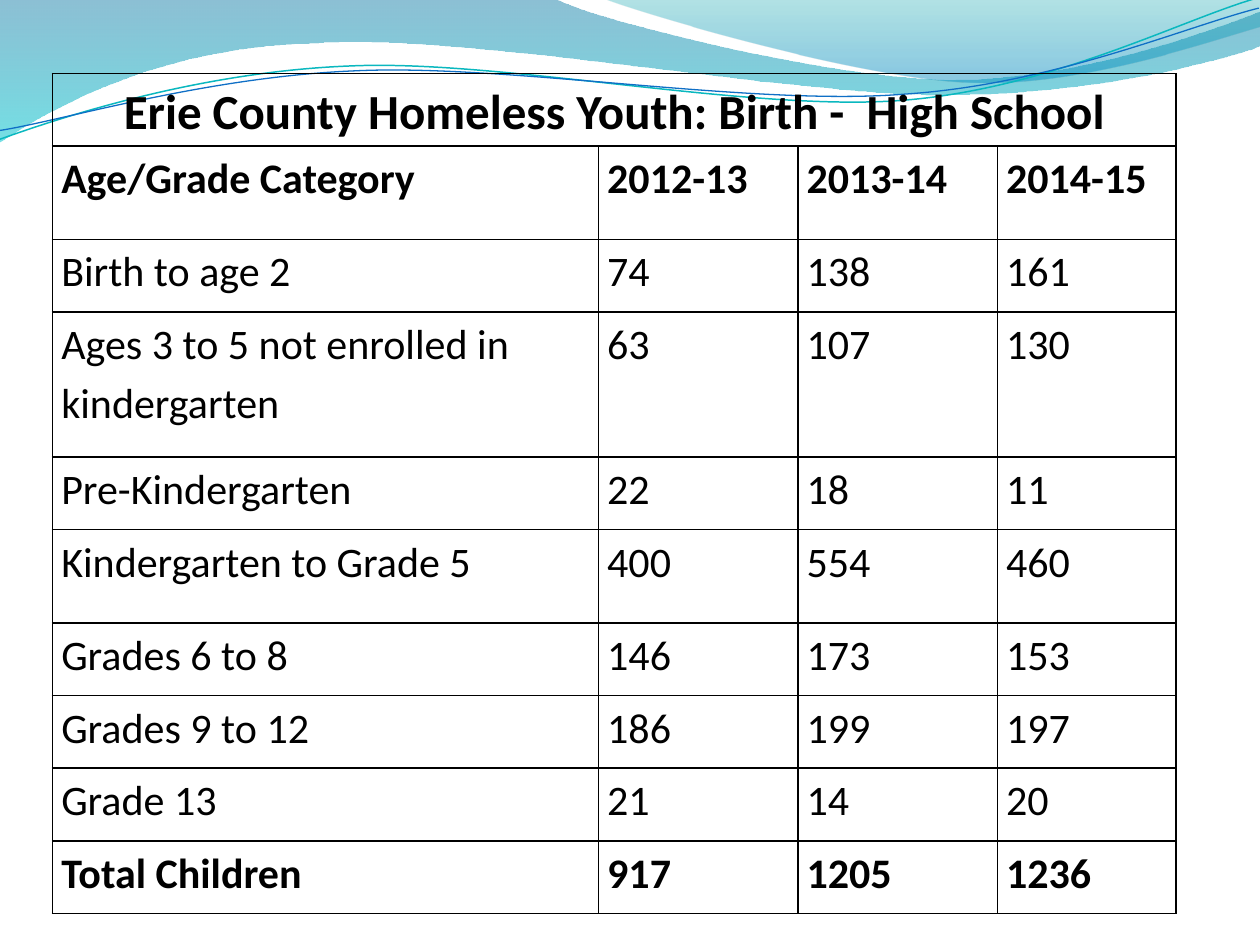
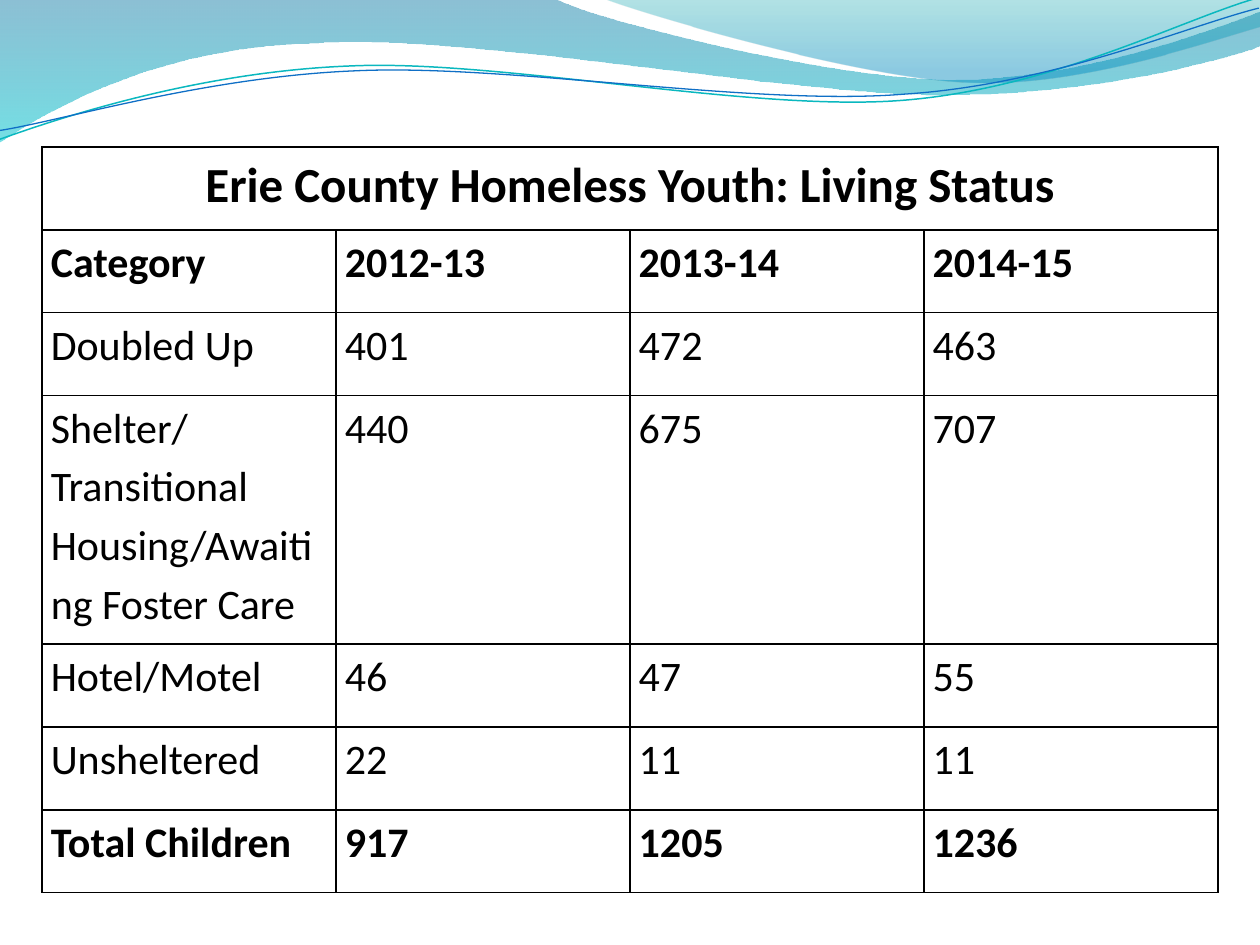
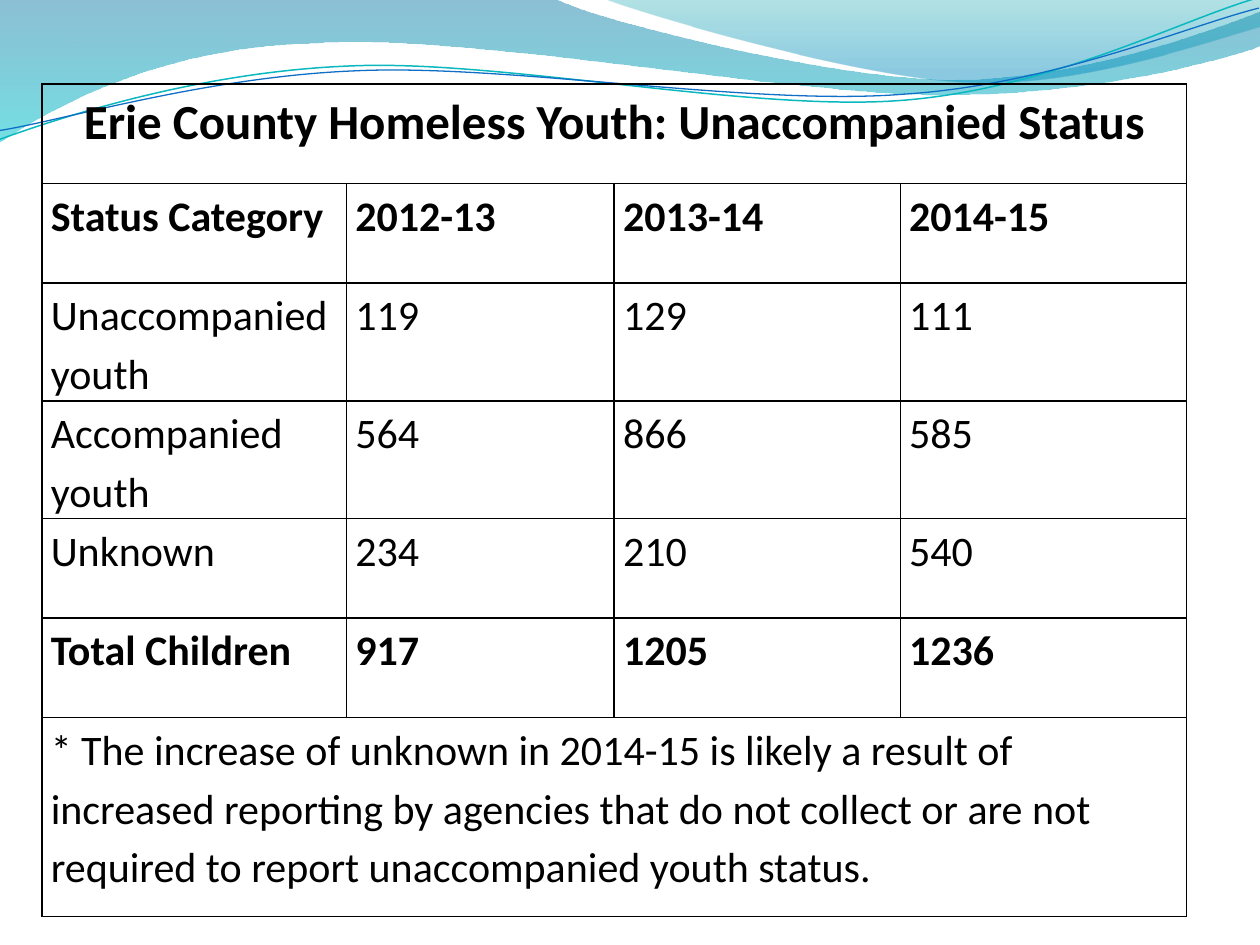
from lxml.etree import SubElement
from pptx import Presentation
from pptx.dml.color import RGBColor
from pptx.enum.text import PP_ALIGN as Align
from pptx.oxml import parse_xml
from pptx.oxml.ns import nsdecls, qn
from pptx.util import Inches, Pt

BLACK = "000000"
FONT = "Calibri"
STRAND_TILT = 357.3
YEARS = ["2012-13", "2013-14", "2014-15"]
TOTALS = ["Total Children", "917", "1205", "1236"]

# Each wave: start point, then (x, y) lines or (x1, y1, x2, y2, x, y) Bezier curves.
# Gradient stops are (position, colour, opacity in percent).
BANDS = [
    ([(0, 0), (4.4, -0.01), (4.76, 0.17, 6.64, 0.63, 7.58, 0.63),
      (8.53, 0.63, 9.58, 0.26, 10, 0.09), (10.01, 0.36),
      (9.83, 0.44, 8.7, 0.76, 7.46, 0.75), (6.22, 0.75, 3.82, 0.28, 2.57, 0.34),
      (1.29, 0.36, 0.46, 0.83, -0.01, 1.13), (0, 0)],
     [(0, "0074A1", 45), (1, "00C6CF", 55)]),
    ([(4.79, -0.01), (5.09, 0.11, 6.82, 0.62, 7.69, 0.65),
      (8.56, 0.69, 9.61, 0.32, 10, 0.21), (10, 0), (4.79, -0.01)],
     [(0, "00A1A9", 30), (0.8, "008BBF", 45)]),
]
# Strand points are given before the tilt.
STRANDS = [
    ([(-0.02, 0.87), (0.47, 0.72, 1.58, 0.41, 2.78, 0.42),
      (3.96, 0.42, 5.91, 0.93, 7.12, 0.9), (8.32, 0.87, 9.4, 0.36, 10, 0.22)],
     "0AB8BF", 0.85),
    ([(-0.02, 0.8), (0.46, 0.75, 1.64, 0.45, 2.83, 0.46),
      (4.03, 0.46, 5.96, 0.89, 7.16, 0.85), (8.35, 0.83, 9.42, 0.42, 10.01, 0.3)],
     "0F6FC6", 0.75),
]

# Left, top and column widths are in twelfths of an inch, row heights in inches.
# A row with a single entry spans the whole table.
AGE_ROW = (6.67 - 2 * 0.74 - 1.15) / 7
LIVING_ROW = 5.92 / 9
TABLES = [
    dict(left=5, top=7, widths=[52, 19, 19, 17],
         heights=[AGE_ROW, 0.74, AGE_ROW, 1.15, AGE_ROW, 0.74] + [AGE_ROW] * 4,
         rows=[["Erie County Homeless Youth: Birth -  High School"],
               ["Age/Grade Category", *YEARS],
               ["Birth to age 2", "74", "138", "161"],
               ["Ages 3 to 5 not enrolled in kindergarten", "63", "107", "130"],
               ["Pre-Kindergarten", "22", "18", "11"],
               ["Kindergarten to Grade 5", "400", "554", "460"],
               ["Grades 6 to 8", "146", "173", "153"],
               ["Grades 9 to 12", "186", "199", "197"],
               ["Grade 13", "21", "14", "20"],
               TOTALS]),
    dict(left=4, top=14, widths=[28] * 4,
         heights=[LIVING_ROW] * 3 + [3 * LIVING_ROW] + [LIVING_ROW] * 3,
         rows=[["Erie County Homeless Youth: Living Status"],
               ["Category", *YEARS],
               ["Doubled Up", "401", "472", "463"],
               ["Shelter/Transitional Housing/Awaiting Foster Care", "440", "675", "707"],
               ["Hotel/Motel", "46", "47", "55"],
               ["Unsheltered", "22", "11", "11"],
               TOTALS]),
    dict(left=4, top=8, widths=[29, 25.5, 27.25, 27.25],
         heights=[0.79] * 6 + [1.58],
         rows=[["Erie County Homeless Youth: Unaccompanied Status"],
               ["Status Category", *YEARS],
               ["Unaccompanied youth", "119", "129", "111"],
               ["Accompanied youth", "564", "866", "585"],
               ["Unknown", "234", "210", "540"],
               TOTALS,
               ["* The increase of unknown in 2014-15 is likely a result of increased "
                "reporting by agencies that do not collect or are not required to "
                "report unaccompanied youth status."]]),
]


def rgb(value):
    return RGBColor.from_string(value)


def add_wave(shapes, segments, closed):
    """Build a freeform through all points, then join each curve's three into a Bezier."""
    points = [(Inches(segment[i]), Inches(segment[i + 1]))
              for segment in segments for i in range(0, len(segment), 2)]
    outline = shapes.build_freeform(*points[0])
    outline.add_line_segments(points[1:], close=closed)
    wave = outline.convert_to_shape()
    wave.shadow.inherit = False
    trace = next(wave.element.iter(qn("a:path")))
    steps = iter(list(trace)[1:])
    for segment in segments[1:]:
        if len(segment) == 2:
            trace.append(next(steps))
            continue
        curve = SubElement(trace, qn("a:cubicBezTo"))
        for _ in range(3):
            step = next(steps)
            trace.remove(step)
            curve.append(step[0])
    for closing in steps:
        trace.append(closing)
    return wave


prs = Presentation()
prs.slide_width, prs.slide_height = Inches(10), Inches(7.5)
blank = prs.slide_layouts[6]
slides = [prs.slides.add_slide(blank) for _ in TABLES]

# The waves are drawn once and moved to the layout that all slides share.
waves = []
for segments, stops in BANDS:
    band = add_wave(slides[0].shapes, segments, True)
    band.line.fill.background()
    band.fill.gradient()
    band.fill.gradient_angle = 270
    for stop, (position, color, _) in zip(band.fill.gradient_stops, stops):
        stop.position = position
        stop.color.rgb = rgb(color)
    for tint, (_, _, opacity) in zip(band.element.spPr.iter(qn("a:srgbClr")), stops):
        SubElement(tint, qn("a:alpha")).set("val", str(opacity * 1000))
    waves.append(band)
for segments, color, weight in STRANDS:
    strand = add_wave(slides[0].shapes, segments, False)
    strand.rotation = STRAND_TILT
    strand.fill.background()
    strand.line.color.rgb = rgb(color)
    strand.line.width = Pt(weight)
    waves.append(strand)
for wave in waves:
    blank.shapes.element.append(wave.element)

for slide, content in zip(slides, TABLES):
    widths, heights, rows = content["widths"], content["heights"], content["rows"]
    table = slide.shapes.add_table(
        len(rows), len(widths), Inches(content["left"] / 12), Inches(content["top"] / 12),
        Inches(sum(widths) / 12), Inches(sum(heights))).table
    table.first_row = table.horz_banding = False
    for column, width in zip(table.columns, widths):
        column.width = Inches(width / 12)

    for r, (entries, height) in enumerate(zip(rows, heights)):
        table.rows[r].height = Inches(height)
        for c in range(len(widths)):
            cell = table.cell(r, c)
            cell.fill.background()
            cell.margin_left = cell.margin_right = Inches(0.07)
            cell.margin_top = cell.margin_bottom = 0
            borders = cell._tc.get_or_add_tcPr()
            for i, side in enumerate("LRTB"):
                borders.insert(i, parse_xml(
                    f'<a:ln{side} {nsdecls("a")} w="{Pt(1)}"><a:solidFill>'
                    f'<a:srgbClr val="{BLACK}"/></a:solidFill></a:ln{side}>'))
        if len(entries) == 1:
            table.cell(r, 0).merge(table.cell(r, len(widths) - 1))
        for c, entry in enumerate(entries):
            paragraph = table.cell(r, c).text_frame.paragraphs[0]
            paragraph.line_spacing = 1.15
            if r == 0:
                paragraph.alignment = Align.CENTER
            run = paragraph.add_run()
            run.text = entry
            run.font.name = FONT
            run.font.size = Pt(28 if r == 0 else 24)
            run.font.bold = r < 2 or entries is TOTALS
            run.font.color.rgb = rgb(BLACK)

prs.save("out.pptx")
